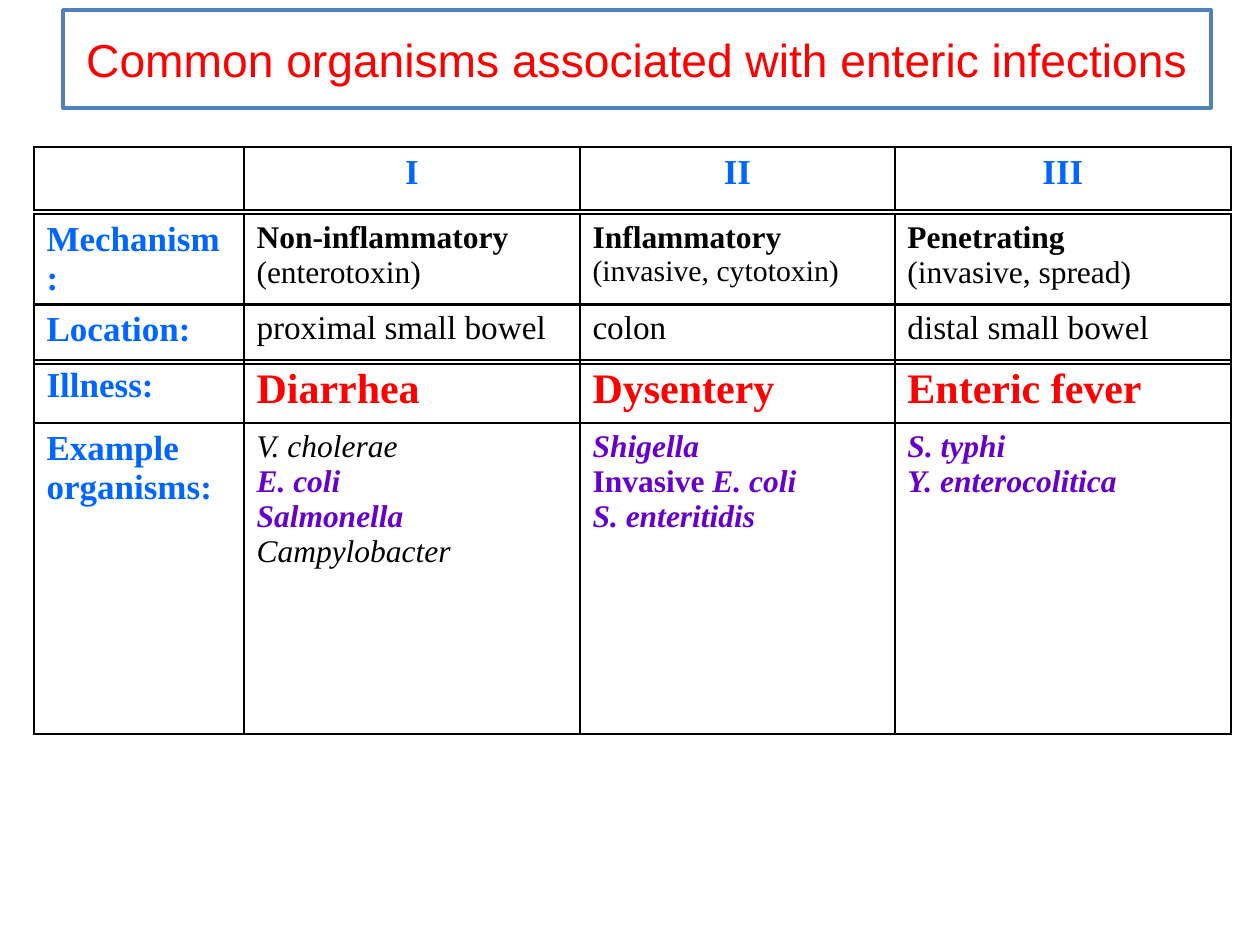
from collections import namedtuple

from lxml.etree import SubElement
from pptx import Presentation
from pptx.dml.color import RGBColor
from pptx.enum.shapes import MSO_SHAPE
from pptx.enum.text import MSO_ANCHOR, PP_ALIGN
from pptx.oxml.ns import qn
from pptx.util import Emu, Pt

PX = 914400 // 126
TABLE_LEFT = 34
COLUMN_WIDTHS = (210, 336, 315, 336)

Style = namedtuple("Style", "size color bold italic", defaults=(False, False))
LABEL = Style(20, "0066FF", bold=True)
MECHANISM = Style(18, "000000", bold=True)
DETAIL = Style(18, "000000")
SMALL_DETAIL = Style(17, "000000")
LOCATION = Style(19, "000000")
ILLNESS = Style(24, "FF0000", bold=True)
ORGANISM = Style(18, "000000", italic=True)
KEY_ORGANISM = Style(18, "6600CC", bold=True, italic=True)
KEY_WORD = Style(18, "6600CC", bold=True)


def px(length):
    return Emu(length * PX)


def color(hex_string):
    return RGBColor.from_string(hex_string)


def one_line(text, style):
    return [[(text, style)]]


def lines(*runs):
    """Give each (text, style) run a paragraph of its own."""
    return [[run] for run in runs]


HEADER = [[]] + [one_line(group, LABEL) for group in ("I", "II", "III")]
MECHANISMS = [
    one_line("Mechanism:", LABEL),
    lines(("Non-inflammatory", MECHANISM), ("(enterotoxin)", DETAIL)),
    [[("Inflammatory ", MECHANISM), ("(invasive, cytotoxin)", SMALL_DETAIL)]],
    lines(("Penetrating", MECHANISM), ("(invasive, spread)", DETAIL)),
]
LOCATIONS = [one_line("Location:", LABEL)] + [
    one_line(place, LOCATION)
    for place in ("proximal small bowel", "colon", "distal small bowel")
]
ILLNESSES = [one_line("Illness:", LABEL)] + [
    one_line(illness, ILLNESS)
    for illness in ("Diarrhea", "Dysentery", "Enteric fever")
]
ORGANISMS = [
    one_line("Example organisms:", LABEL),
    lines(("V. cholerae", ORGANISM), ("E. coli", KEY_ORGANISM),
          ("Salmonella", KEY_ORGANISM), ("Campylobacter", ORGANISM)),
    [[("Shigella", KEY_ORGANISM)],
     [("Invasive ", KEY_WORD), ("E. coli", KEY_ORGANISM)],
     [("S. enteritidis", KEY_ORGANISM)]],
    lines(("S. typhi", KEY_ORGANISM), ("Y. enterocolitica", KEY_ORGANISM)),
]

# top, height, cells, alignment
BANDS = (
    (147, 63, HEADER, PP_ALIGN.CENTER),
    (214, 91, MECHANISMS, PP_ALIGN.LEFT),
    (304, 60, LOCATIONS, PP_ALIGN.LEFT),
    (360, 63, ILLNESSES, PP_ALIGN.LEFT),
    (423, 311, ORGANISMS, PP_ALIGN.LEFT),
)


def format_run(run, style):
    font = run.font
    font.name = "Times New Roman"
    font.size = Pt(style.size)
    font.bold = style.bold
    font.italic = style.italic
    font.color.rgb = color(style.color)


def fill_cell(cell, paragraphs, alignment):
    frame = cell.text_frame
    for index, runs in enumerate(paragraphs):
        paragraph = frame.add_paragraph() if index else frame.paragraphs[0]
        paragraph.alignment = alignment
        for text, style in runs:
            run = paragraph.add_run()
            run.text = text
            format_run(run, style)


def border_cell(cell):
    properties = cell._tc.get_or_add_tcPr()
    for side in ("a:lnL", "a:lnR", "a:lnT", "a:lnB"):
        border = SubElement(properties, qn(side), w=str(Pt(1)))
        solid = SubElement(border, qn("a:solidFill"))
        SubElement(solid, qn("a:srgbClr"), val="000000")


def add_band(slide, top, height, cells, alignment):
    """Add one row of the overview as a table of its own."""
    table = slide.shapes.add_table(
        1, len(COLUMN_WIDTHS), px(TABLE_LEFT), px(top),
        px(sum(COLUMN_WIDTHS)), px(height)).table
    table.first_row = False
    table.horz_banding = False
    for column, width in zip(table.columns, COLUMN_WIDTHS):
        column.width = px(width)
    for cell, paragraphs in zip(table.rows[0].cells, cells):
        fill_cell(cell, paragraphs, alignment)
        border_cell(cell)
        cell.fill.background()


def add_title(slide, text):
    title = slide.shapes.add_shape(
        MSO_SHAPE.RECTANGLE, px(63), px(10), px(1148), px(98))
    title.shadow.inherit = False
    title.fill.background()
    title.line.color.rgb = color("4F81BD")
    title.line.width = Pt(2)
    frame = title.text_frame
    frame.word_wrap = True
    frame.vertical_anchor = MSO_ANCHOR.MIDDLE
    frame.text = text
    paragraph = frame.paragraphs[0]
    paragraph.alignment = PP_ALIGN.CENTER
    font = paragraph.runs[0].font
    font.name = "Arial"
    font.size = Pt(26.4)
    font.color.rgb = color("FF0000")


def main():
    presentation = Presentation()
    presentation.slide_width = px(1260)
    presentation.slide_height = px(945)
    slide = presentation.slides.add_slide(presentation.slide_layouts[6])
    for band in BANDS:
        add_band(slide, *band)
    add_title(slide, "Common organisms associated with enteric infections")
    presentation.save("out.pptx")


if __name__ == "__main__":
    main()
